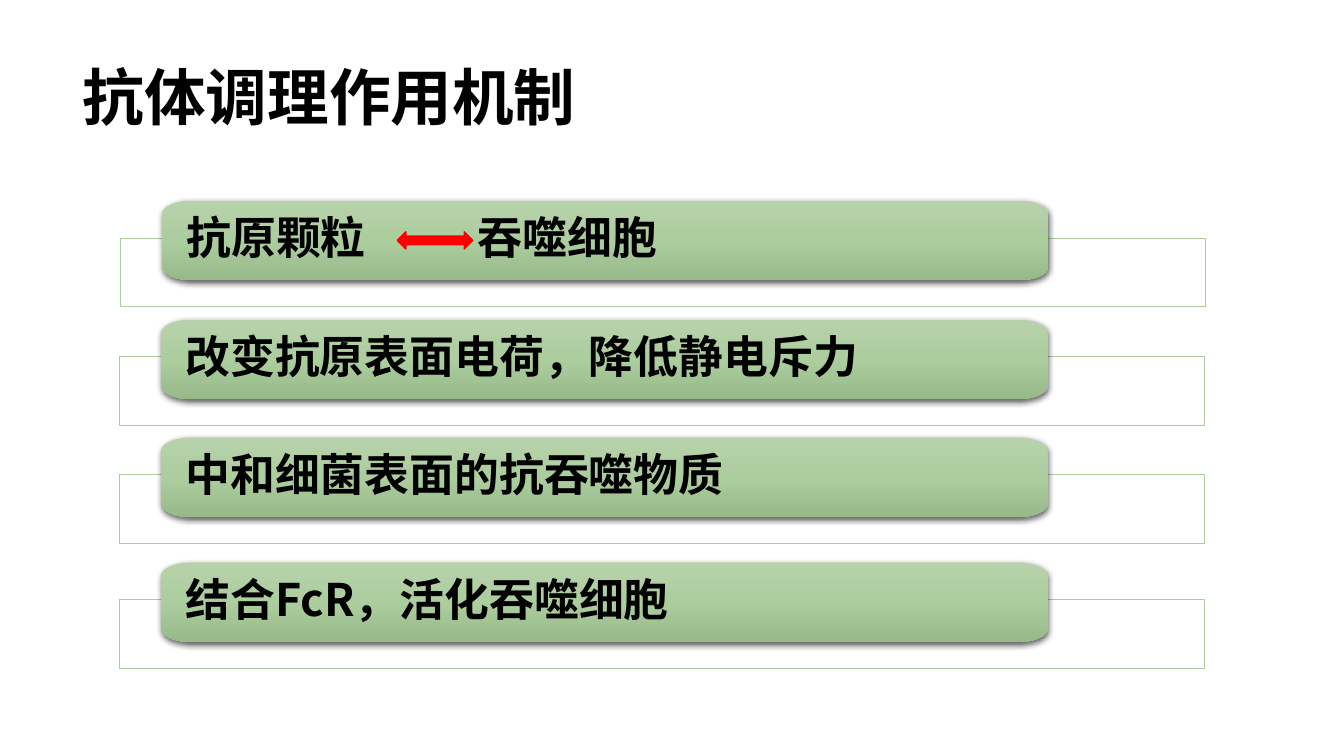
"""Build a slide with four bars on the mechanism of antibody opsonization."""
from copy import deepcopy

from pptx import Presentation
from pptx.dml.color import RGBColor
from pptx.enum.shapes import MSO_SHAPE
from pptx.enum.text import MSO_ANCHOR, PP_ALIGN
from pptx.oxml import parse_xml
from pptx.oxml.ns import nsdecls, qn
from pptx.util import Inches, Pt

LEFT, MIDDLE = PP_ALIGN.LEFT, MSO_ANCHOR.MIDDLE
RECTANGLE, DOUBLE_ARROW = MSO_SHAPE.RECTANGLE, MSO_SHAPE.LEFT_RIGHT_ARROW
FONT = "Noto Sans CJK SC"
BAR_WIDTH, BAR_HEIGHT = 8.79, 0.79
CORNER_WIDTH, CORNER_HEIGHT = 0.3, 0.13
CURVE = 0.55
FRAME_WIDTH, FRAME_HEIGHT = 10.77, 0.68
FRAME_INDENT, FRAME_DROP = 0.42, 0.37
GRADIENT = [(0, "B7D2AB"), (0.5, "ACCD9E"), (1, "98B98A")]
ROWS = [
    (1.61, 1.99, "抗原颗粒\t吞噬细胞"),
    (1.6, 3.17, "改变抗原表面电荷，降低静电斥力"),
    (1.6, 4.34, "中和细菌表面的抗吞噬物质"),
    (1.6, 5.58, "结合FcR，活化吞噬细胞"),
]


def color(value):
    return RGBColor.from_string(value)


def write(shape, text, size, after=0):
    frame = shape.text_frame
    frame.word_wrap = True
    frame.vertical_anchor = MIDDLE
    para = frame.paragraphs[0]
    para.alignment = LEFT
    para.line_spacing = 0.9
    para.space_after = Pt(after)
    span = para.add_run()
    span.text = text
    span.font.size = Pt(size)
    span.font.bold = True
    span.font.name = FONT
    span.font.color.rgb = color("000000")
    span.font._element.append(parse_xml(f'<a:ea {nsdecls("a")} typeface="{FONT}"/>'))
    return para


deck = Presentation()
deck.slide_width, deck.slide_height = Inches(13.33), Inches(7.5)
page = deck.slides.add_slide(deck.slide_layouts[5])

title = page.shapes.title
title.left, title.top = Inches(0.72), Inches(0.27)
title.width, title.height = Inches(11.5), Inches(1.45)
write(title, "抗体调理作用机制", 44)

for left, top, text in ROWS:
    frame = page.shapes.add_shape(
        RECTANGLE, Inches(left - FRAME_INDENT), Inches(top + FRAME_DROP),
        Inches(FRAME_WIDTH), Inches(FRAME_HEIGHT))
    frame.shadow.inherit = False
    frame.fill.solid()
    frame.fill.fore_color.rgb = color("FFFFFF")
    frame.line.color.rgb = color("ADCBA0")
    frame.line.width = Pt(0.5)

    right, bottom = left + BAR_WIDTH, top + BAR_HEIGHT
    corners = [(left, top, 1, 1), (right, top, -1, 1),
               (right, bottom, -1, -1), (left, bottom, 1, -1)]
    outline = []
    for x, y, across, down in corners:
        shares = [(0, 1), (0, 1 - CURVE), (1 - CURVE, 0), (1, 0)]
        points = [(Inches(x + across * CORNER_WIDTH * share_x),
                   Inches(y + down * CORNER_HEIGHT * share_y))
                  for share_x, share_y in shares]
        outline += points if across == down else points[::-1]
    builder = page.shapes.build_freeform(*outline[0])
    builder.add_line_segments(outline[1:], close=True)
    bar = builder.convert_to_shape()
    segments = list(bar._element.iter(qn("a:lnTo")))
    for first in range(0, 4 * len(corners), 4):
        bend = parse_xml(f'<a:cubicBezTo {nsdecls("a")}/>')
        segments[first].addprevious(bend)
        for segment in segments[first:first + 3]:
            bend.append(segment[0])
            segment.getparent().remove(segment)

    bar.line.fill.background()
    bar.fill.gradient()
    bar.fill.gradient_angle = 270
    stops = bar._element.spPr.find(qn("a:gradFill")).find(qn("a:gsLst"))
    stops.append(deepcopy(stops[0]))
    for stop, (position, shade) in zip(bar.fill.gradient_stops, GRADIENT):
        stop.position = position
        stop.color.rgb = color(shade)
    bar.shadow.inherit = False
    bar._element.spPr.find(qn("a:effectLst")).append(parse_xml(
        f'<a:outerShdw {nsdecls("a")} blurRad="{Pt(4.5)}" dist="{Pt(1.5)}" dir="5400000" '
        'algn="ctr" rotWithShape="0"><a:srgbClr val="000000"><a:alpha val="63000"/>'
        '</a:srgbClr></a:outerShdw>'))
    bar.text_frame.margin_left = bar.text_frame.margin_right = Inches(0.24)
    para = write(bar, text, 32, after=11.2)
    if "\t" in text:
        para._p.get_or_add_pPr().append(parse_xml(
            f'<a:tabLst {nsdecls("a")}><a:tab pos="{Inches(2.89)}" algn="l"/></a:tabLst>'))

arrow = page.shapes.add_shape(
    DOUBLE_ARROW, Inches(3.94), Inches(2.3), Inches(0.75), Inches(0.17))
arrow.shadow.inherit = False
arrow.fill.solid()
arrow.fill.fore_color.rgb = color("FF0000")
arrow.line.color.rgb = color("FF0000")
arrow.line.width = Pt(1)

deck.save("out.pptx")
